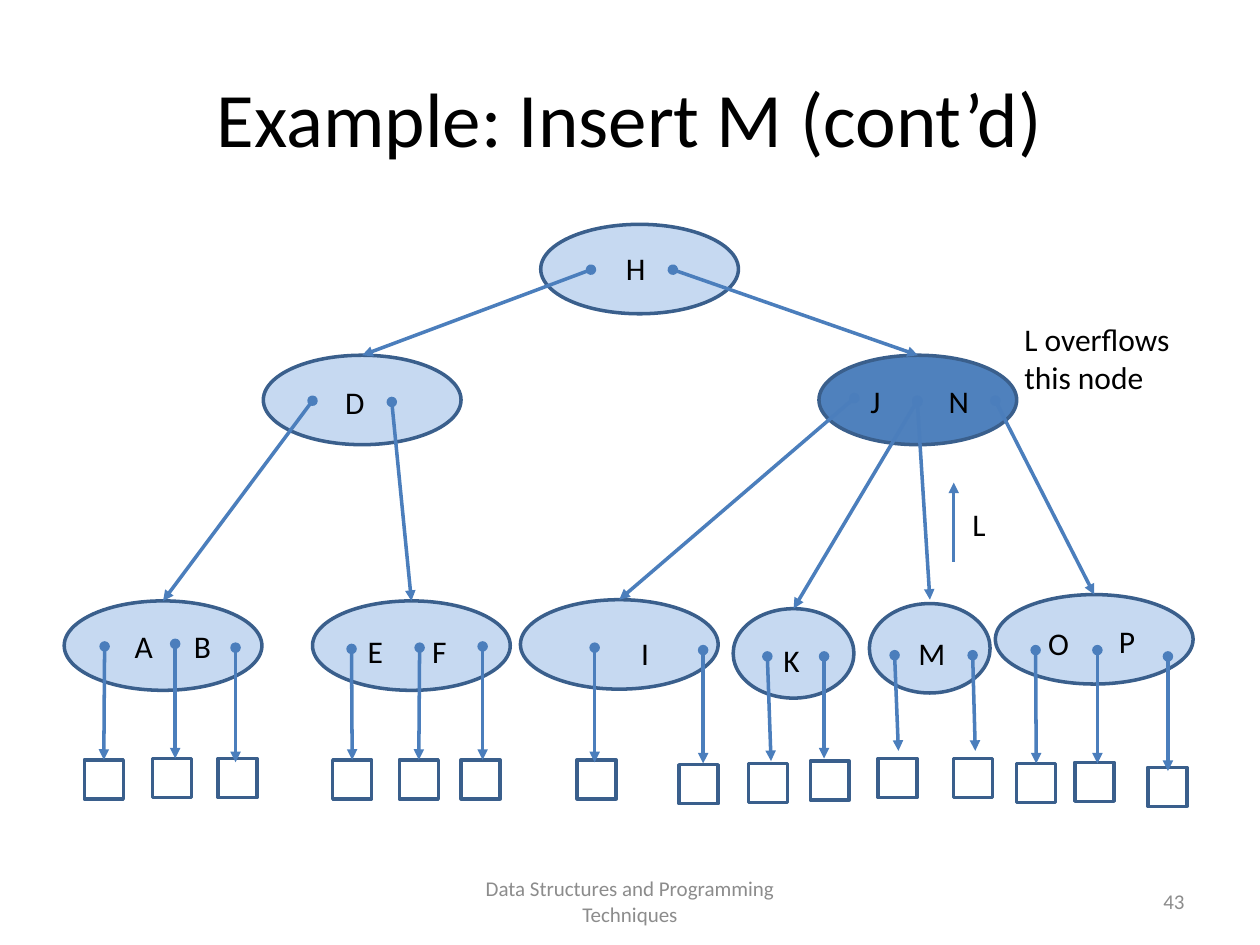
from dataclasses import dataclass

from lxml.etree import SubElement
from pptx import Presentation
from pptx.dml.color import RGBColor
from pptx.enum.shapes import MSO_CONNECTOR, MSO_SHAPE
from pptx.enum.text import MSO_ANCHOR, MSO_AUTO_SIZE, PP_ALIGN
from pptx.oxml.ns import qn
from pptx.shapes.autoshape import Shape
from pptx.shapes.connector import Connector
from pptx.slide import Slide
from pptx.util import Pt

FONT = "Calibri"
BLACK, GREY = "000000", "8C8C8C"
PALE, DARK = "C6D9F1", "4F81BD"
OUTLINE, ARROW = "3A5F8C", "4B7EBC"
NODE_HEIGHT = 51.1
WIDE, NARROW = 113, 69
LEAF_SIDE = 22.3
LINE_WIDTH = 2


@dataclass
class Node:
    name: str
    left: float
    top: float
    width: float = WIDE
    fill: str = PALE


@dataclass
class Key:
    letter: str
    left: float
    top: float


@dataclass
class Branch:
    child: str
    x: float
    y: float


@dataclass
class Leaf:
    left: float
    top: float
    start: tuple[float, float]
    tip: tuple[float, float]

    def is_met_at_top(self) -> bool:
        x, y = self.tip
        middle = self.left + LEAF_SIDE / 2
        return abs(x - middle) < 1 and abs(y - self.top) < 1.5


NODES = [
    Node("H", 309, 128.2),
    Node("D", 150.5, 203),
    Node("JN", 468, 203, fill=DARK),
    Node("AB", 36.7, 343.4),
    Node("EF", 178.6, 343.4),
    Node("I", 297.4, 342.7),
    Node("K", 419, 347.8, NARROW),
    Node("M", 496.8, 344.9, NARROW),
    Node("OP", 568.8, 339.8),
]

KEYS = [
    Key("H", 350.6, 139), Key("D", 190.1, 215.3),
    Key("J", 490.3, 214.6), Key("N", 535, 214.6),
    Key("A", 69.8, 355), Key("B", 103.7, 355),
    Key("E", 203, 357.8), Key("F", 239.8, 357.8),
    Key("I", 359.3, 358.6), Key("K", 440.6, 362.9), Key("M", 517.7, 358.6),
    Key("O", 591.8, 352.8), Key("P", 632.2, 352.1),
    Key("L", 548.6, 285.1),
]

BRANCHES = [
    Branch("D", 337.7, 154.1), Branch("JN", 384.5, 154.1),
    Branch("AB", 178.6, 229), Branch("EF", 223.9, 229.7),
    Branch("I", 488.2, 227.5), Branch("K", 524.2, 229),
    Branch("OP", 568.8, 229),
]

LEAVES = [
    Leaf(48.2, 434.2, (59.8, 369.4), (59.8, 434.2)),
    Leaf(87.1, 433.4, (100.1, 367.9), (100.1, 433.4)),
    Leaf(124.6, 433.4, (134.6, 370.1), (134.6, 435.6)),
    Leaf(190.1, 434.2, (200.9, 370.8), (200.9, 435.6)),
    Leaf(228.2, 434.2, (239.8, 370.1), (239.8, 435.6)),
    Leaf(263.5, 434.2, (275.8, 369.4), (275.8, 434.2)),
    Leaf(329.8, 434.2, (339.8, 370.1), (339.8, 435.6)),
    Leaf(388.1, 437, (401.8, 371.5), (401.8, 436.3)),
    Leaf(427.7, 436.3, (438.5, 375.1), (440.6, 434.9)),
    Leaf(463, 434.9, (470.9, 375.1), (470.9, 433.4)),
    Leaf(501.8, 433.4, (511.2, 374.4), (513.4, 429.1)),
    Leaf(545, 433.4, (555.8, 374.4), (557.3, 429.1)),
    Leaf(581, 436.3, (591.8, 371.5), (591.8, 436.3)),
    Leaf(614.2, 435.6, (627.1, 371.5), (627.1, 436.3)),
    Leaf(655.9, 438.5, (667.4, 375.1), (667.4, 440.6)),
]


def color(value: str) -> RGBColor:
    return RGBColor.from_string(value)


def add_outlined(page: Slide, kind: MSO_SHAPE, left: float, top: float,
                 width: float, height: float, fill: str | None = None) -> Shape:
    shape = page.shapes.add_shape(kind, Pt(left), Pt(top), Pt(width), Pt(height))
    shape.shadow.inherit = False
    shape.line.color.rgb = color(OUTLINE)
    shape.line.width = Pt(LINE_WIDTH)
    if fill:
        shape.fill.solid()
        shape.fill.fore_color.rgb = color(fill)
    else:
        shape.fill.background()
    return shape


def add_arrow(page: Slide, start: tuple[float, float], tip: tuple[float, float],
              dotted_start: bool = True) -> Connector:
    arrow = page.shapes.add_connector(
        MSO_CONNECTOR.STRAIGHT, *(Pt(value) for value in (*start, *tip)))
    arrow.line.color.rgb = color(ARROW)
    arrow.line.width = Pt(LINE_WIDTH)
    line = arrow.line._get_or_add_ln()
    if dotted_start:
        SubElement(line, qn("a:headEnd"), type="oval")
    SubElement(line, qn("a:tailEnd"), type="triangle")
    SubElement(arrow._element.spPr, qn("a:effectLst"))
    return arrow


def add_text(page: Slide, text: str, left: float, top: float, width: float,
             height: float, size: float = 18, ink: str = BLACK,
             align: PP_ALIGN = PP_ALIGN.LEFT,
             anchor: MSO_ANCHOR = MSO_ANCHOR.TOP, grow: bool = False) -> None:
    box = page.shapes.add_textbox(Pt(left), Pt(top), Pt(width), Pt(height))
    frame = box.text_frame
    frame.word_wrap = True
    frame.auto_size = MSO_AUTO_SIZE.SHAPE_TO_FIT_TEXT if grow else MSO_AUTO_SIZE.NONE
    frame.vertical_anchor = anchor
    frame.text = text
    for para in frame.paragraphs:
        para.alignment = align
        for span in para.runs:
            span.font.name = FONT
            span.font.size = Pt(size)
            span.font.color.rgb = color(ink)


def draw_tree(page: Slide) -> None:
    ellipses = {
        node.name: add_outlined(page, MSO_SHAPE.OVAL, node.left, node.top,
                                node.width, NODE_HEIGHT, node.fill)
        for node in NODES
    }
    for key in KEYS:
        add_text(page, key.letter, key.left, key.top, 34, 29, grow=True)
    for branch in BRANCHES:
        start = (branch.x, branch.y)
        add_arrow(page, start, start).end_connect(ellipses[branch.child], 0)
    add_arrow(page, (524.2, 229.7), (531.4, 342.7))
    for leaf in LEAVES:
        square = add_outlined(page, MSO_SHAPE.RECTANGLE, leaf.left, leaf.top,
                              LEAF_SIDE, LEAF_SIDE)
        arrow = add_arrow(page, leaf.start, leaf.tip)
        if leaf.is_met_at_top():
            arrow.end_connect(square, 0)


def main() -> None:
    deck = Presentation()
    deck.slide_width, deck.slide_height = Pt(720), Pt(540)
    page = deck.slides.add_slide(deck.slide_layouts[6])
    add_text(page, "Example: Insert M (cont’d)", 36, 21.6, 648, 90, 44,
             align=PP_ALIGN.CENTER, anchor=MSO_ANCHOR.MIDDLE)
    draw_tree(page)
    add_arrow(page, (545, 321.1), (545, 275.8), dotted_start=False)
    add_text(page, "L overflows\nthis node", 578.2, 179.3, 133.2, 51, grow=True)
    add_text(page, "Data Structures and Programming Techniques", 246, 500.5, 228,
             28.8, 12, GREY, PP_ALIGN.CENTER, MSO_ANCHOR.MIDDLE)
    add_text(page, "43", 516, 500.5, 168, 28.8, 12, GREY,
             PP_ALIGN.RIGHT, MSO_ANCHOR.MIDDLE)
    deck.save("out.pptx")


if __name__ == "__main__":
    main()
